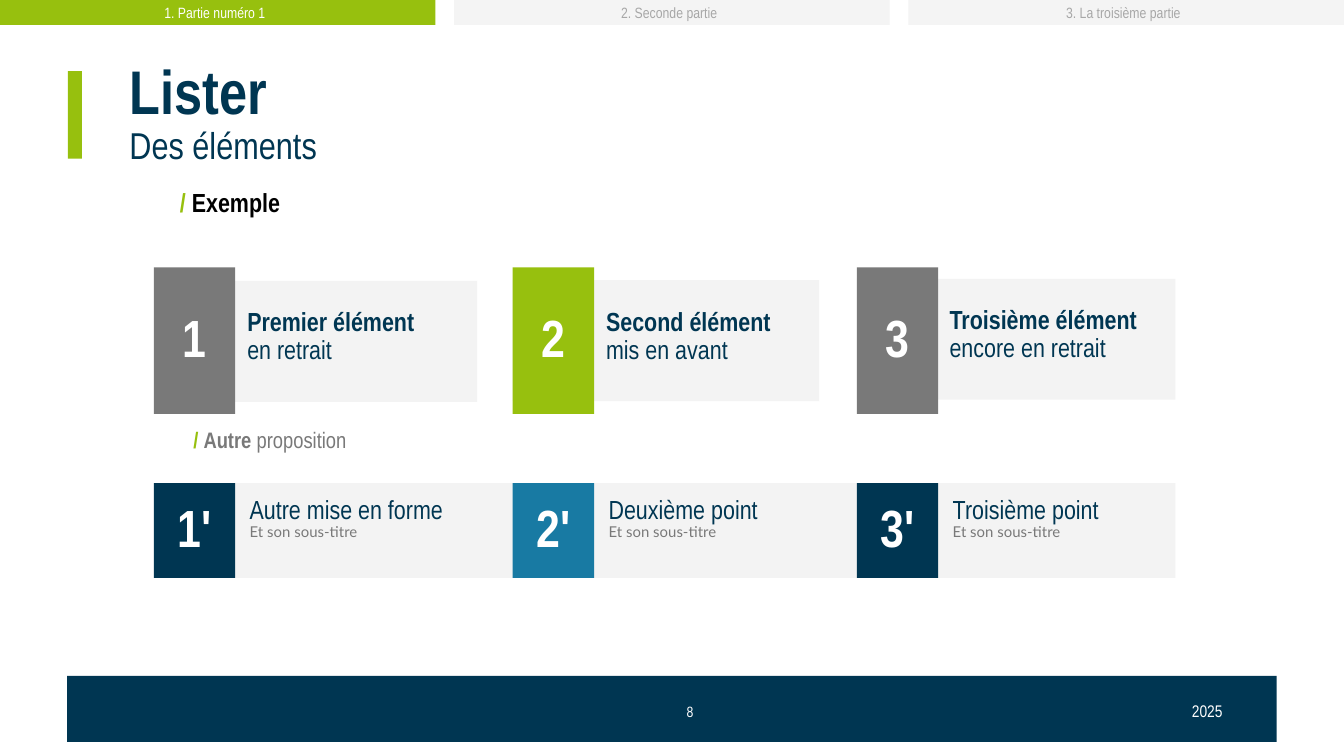
"""Build the slide that lists items as numbered cards under a progress bar."""

from dataclasses import dataclass

import pptx
import pptx.dml.color
import pptx.enum.shapes
import pptx.enum.text
import pptx.util

PX = 4572
NARROW = "Arial Narrow"
MIDDLE = pptx.enum.text.MSO_ANCHOR.MIDDLE
TOP = pptx.enum.text.MSO_ANCHOR.TOP
LEFT = pptx.enum.text.PP_ALIGN.LEFT
CENTER = pptx.enum.text.PP_ALIGN.CENTER
COLORS = {
    "navy": "003652",
    "blue": "187AA3",
    "green": "97C00E",
    "gray": "797979",
    "panel": "F3F3F3",
    "tab": "F4F4F4",
    "tab text": "A7A7A7",
    "white": "FFFFFF",
    "black": "000000",
}


@dataclass(frozen=True)
class Area:
    left: int
    top: int
    width: int
    height: int


@dataclass(frozen=True)
class Span:
    text: str
    size: int
    color: str
    bold: bool = False
    font: str = NARROW


@dataclass(frozen=True)
class Layout:
    margins: tuple[int, int, int, int] = (20, 20, 20, 20)
    anchor: pptx.enum.text.MSO_ANCHOR = TOP
    align: pptx.enum.text.PP_ALIGN = LEFT
    line_spacing: float = 0.9


@dataclass(frozen=True)
class Card:
    left: int
    panel: Area
    number: str
    color: str
    heading: str
    detail: str
    label: Area


@dataclass(frozen=True)
class Point:
    left: int
    number: str
    color: str
    heading: str
    width: int


@dataclass(frozen=True)
class Tab:
    text: str
    fill: str
    color: str


BODY = Layout()
NUMBER = Layout(anchor=MIDDLE, align=CENTER)
CARD_LABEL = Layout(margins=(16, 0, 20, 16), anchor=MIDDLE)
TAB = Layout(margins=(0, 8, 8, 8), anchor=MIDDLE, align=CENTER, line_spacing=1.0)
PAGE_NUMBER = Layout((20, 10, 20, 10), MIDDLE, CENTER, 1.0)
YEAR = Layout((20, 10, 20, 10), line_spacing=1.0)
COLUMNS = (229, 763, 1275)

CARDS = [
    Card(COLUMNS[0], Area(268, 418, 442, 180), "1", "gray", "Premier élément ", "en retrait",
         Area(352, 420, 322, 180)),
    Card(COLUMNS[1], Area(763, 417, 456, 180), "2", "green", "Second élément ", "mis en avant",
         Area(886, 420, 294, 180)),
    Card(COLUMNS[2], Area(1275, 415, 474, 180), "3", "gray", "Troisième élément ",
         "encore en retrait", Area(1397, 419, 350, 176)),
]
POINTS = [
    Point(COLUMNS[0], "1'", "navy", "Autre mise en forme ", 332),
    Point(COLUMNS[1], "2'", "blue", "Deuxième point ", 272),
    Point(COLUMNS[2], "3'", "navy", "Troisième point ", 276),
]
TABS = [
    Tab("1. Partie numéro 1", "green", "white"),
    Tab("2. Seconde partie", "tab", "tab text"),
    Tab("3. La troisième partie", "tab", "tab text"),
]


def color_of(name: str) -> pptx.dml.color.RGBColor:
    """Return the named colour."""
    return pptx.dml.color.RGBColor.from_string(COLORS[name])


def emu(area: Area) -> tuple[int, int, int, int]:
    """Turn an area into lengths in EMU."""
    return area.left * PX, area.top * PX, area.width * PX, area.height * PX


def write(box, layout: Layout, *lines: list[Span]) -> None:
    """Fill a shape with one paragraph for each list of spans."""
    frame = box.text_frame
    frame.word_wrap = True
    frame.vertical_anchor = layout.anchor
    (frame.margin_left, frame.margin_top,
     frame.margin_right, frame.margin_bottom) = (side * PX for side in layout.margins)
    for index, line in enumerate(lines):
        para = frame.add_paragraph() if index else frame.paragraphs[0]
        para.alignment = layout.align
        para.line_spacing = layout.line_spacing
        for span in line:
            run = para.add_run()
            run.text = span.text
            run.font.name = span.font
            run.font.size = pptx.util.Pt(span.size)
            run.font.bold = span.bold
            run.font.color.rgb = color_of(span.color)


def add_block(page, area: Area, fill: str):
    """Draw a plain filled rectangle and return it."""
    block = page.shapes.add_shape(pptx.enum.shapes.MSO_SHAPE.RECTANGLE, *emu(area))
    block.shadow.inherit = False
    block.fill.solid()
    block.fill.fore_color.rgb = color_of(fill)
    block.line.fill.background()
    return block


def add_text(page, area: Area, layout: Layout, *lines: list[Span]) -> None:
    """Add a text box."""
    write(page.shapes.add_textbox(*emu(area)), layout, *lines)


def add_number(page, area: Area, number: str, fill: str) -> None:
    """Draw a coloured block that holds a large number."""
    write(add_block(page, area, fill), NUMBER, [Span(number, 28, "white", True)])


def add_card(page, card: Card) -> None:
    """Draw a numbered card with its panel and label."""
    add_block(page, card.panel, "panel")
    add_text(page, card.label, CARD_LABEL,
             [Span(card.heading, 14, "navy", True), Span(card.detail, 14, "navy")])
    add_number(page, Area(card.left, 398, 121, 218), card.number, card.color)


def add_point(page, point: Point) -> None:
    """Draw a numbered point with its subtitle."""
    add_text(page, Area(point.left + 123, 719, point.width, 180), BODY,
             [Span(point.heading, 14, "navy"), Span("Et son sous-titre", 8, "gray", font="Lato")])
    add_number(page, Area(point.left, 719, 121, 141), point.number, point.color)


def main() -> None:
    """Build and save the deck."""
    deck = pptx.Presentation()
    deck.slide_width, deck.slide_height = 2000 * PX, 1125 * PX
    page = deck.slides.add_slide(deck.slide_layouts[6])

    add_block(page, Area(100, 1006, 1800, 98), "navy")
    add_text(page, Area(954, 1029, 146, 60), PAGE_NUMBER, [Span("8", 8, "white")])
    add_text(page, Area(1754, 1033, 240, 60), YEAR, [Span("2025", 9, "white")])
    add_block(page, Area(101, 106, 21, 130), "green")
    add_text(page, Area(173, 105, 538, 130), Layout(anchor=MIDDLE),
             [Span("Lister", 33, "navy", True)], [Span("Des éléments", 20, "navy")])

    add_text(page, Area(248, 263, 560, 180), BODY,
             [Span("/ ", 14, "green", True), Span("Exemple", 14, "black", True)])
    for card in CARDS:
        add_card(page, card)

    add_block(page, Area(268, 719, 1481, 141), "panel")
    for point in POINTS:
        add_point(page, point)
    add_text(page, Area(268, 621, 382, 180), BODY,
             [Span("/ ", 12, "green", True), Span("Autre ", 12, "gray", True),
              Span("proposition", 12, "gray")])

    for index, tab in enumerate(TABS):
        block = add_block(page, Area(index * 676, 0, 648, 37), tab.fill)
        write(block, TAB, [Span(tab.text, 8, tab.color)])
    deck.save("out.pptx")


if __name__ == "__main__":
    main()
